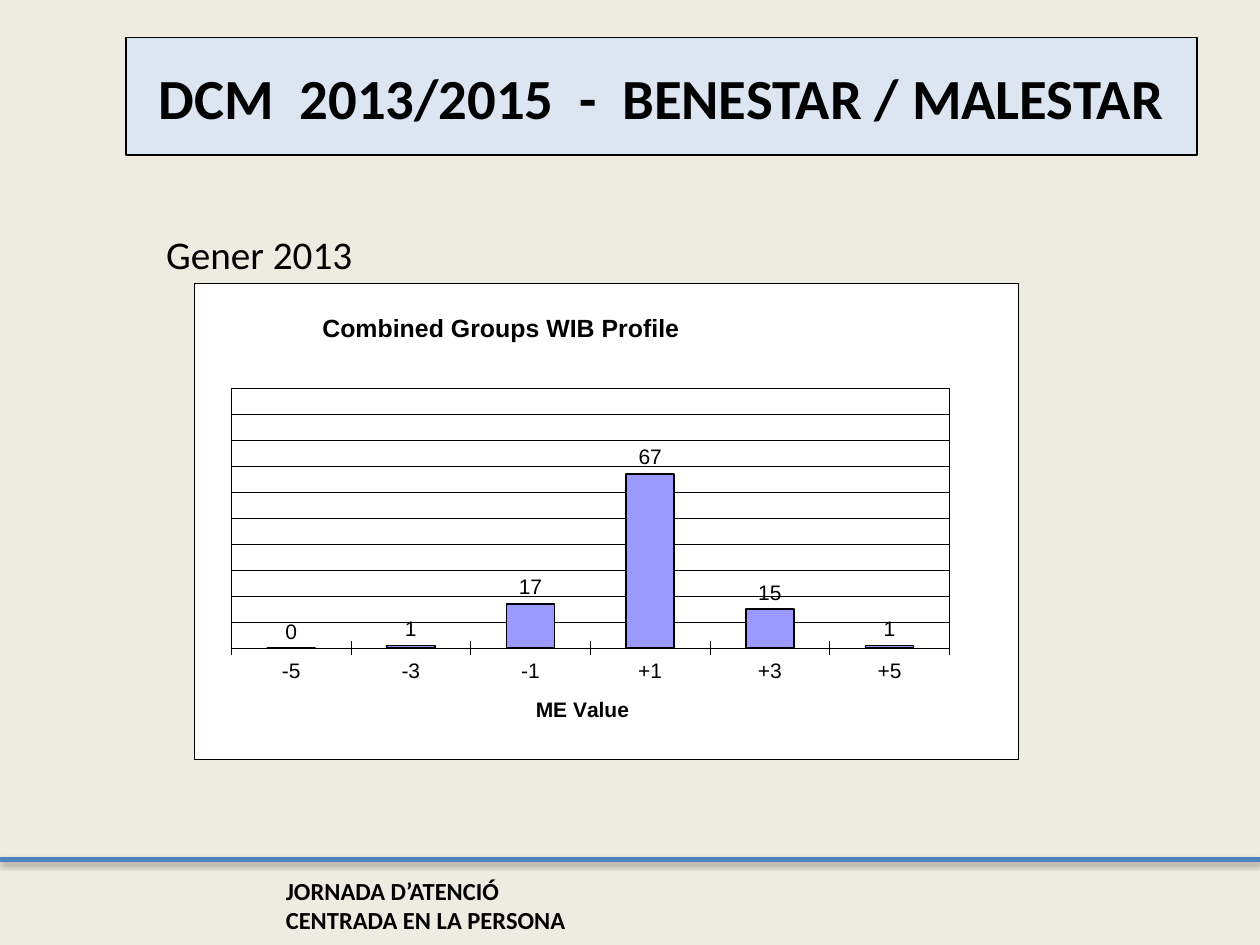
from dataclasses import dataclass

from pptx import Presentation
from pptx import util as u
from pptx.chart.data import CategoryChartData
from pptx.dml.color import RGBColor
from pptx.enum import chart as ch, shapes, text
from pptx.oxml import parse_xml
from pptx.oxml.ns import nsdecls, qn

BLACK = RGBColor(0x00, 0x00, 0x00)
CREAM = RGBColor(0xEE, 0xEC, 0xE1)
PALE_BLUE = RGBColor(0xDC, 0xE6, 0xF2)
RULE_BLUE = RGBColor(0x4F, 0x81, 0xBD)
BAR_VIOLET = RGBColor(0x99, 0x99, 0xFF)


@dataclass
class Caption:
    words: str
    left: float
    top: float
    width: float
    height: float
    size: float
    bold: bool = False
    hanging: float = 0


CAPTIONS = [
    Caption("JORNADA D’ATENCIÓ CENTRADA EN LA PERSONA", 2.17, 6.9, 2.68, 0.57, 14, True),
    Caption("Gener 2013", 1.22, 1.78, 1.73, 0.47, 22.4, hanging=0.38),
]


def apply(target, values: dict) -> None:
    for key, value in values.items():
        setattr(target, key, value)


def set_font(font, size: float, bold: bool = False, name: str = "Calibri") -> None:
    apply(font, {"name": name, "size": u.Pt(size), "bold": bold})
    font.color.rgb = BLACK


def set_line(line, width: float, color: RGBColor = BLACK) -> None:
    line.color.rgb = color
    line.width = u.Pt(width)


def add_caption(slide, caption: Caption) -> None:
    box = slide.shapes.add_textbox(
        *map(u.Inches, (caption.left, caption.top, caption.width, caption.height)))
    box.text_frame.word_wrap = True
    paragraph = box.text_frame.paragraphs[0]
    paragraph.text = caption.words
    if caption.hanging:
        properties = paragraph._p.get_or_add_pPr()
        properties.set("marL", str(u.Inches(caption.hanging)))
        properties.set("indent", str(-u.Inches(caption.hanging)))
    set_font(paragraph.runs[0].font, caption.size, caption.bold)


def add_heading(slide) -> None:
    heading = slide.shapes.add_shape(
        shapes.MSO_SHAPE.RECTANGLE, *map(u.Inches, (1, 0.3, 8.5, 0.93)))
    heading.shadow.inherit = False
    heading.fill.solid()
    heading.fill.fore_color.rgb = PALE_BLUE
    set_line(heading.line, 0.75)
    apply(heading.text_frame, {"word_wrap": True, "vertical_anchor": text.MSO_ANCHOR.MIDDLE})
    paragraph = heading.text_frame.paragraphs[0]
    paragraph.text = "DCM  2013/2015  -  BENESTAR / MALESTAR"
    paragraph.alignment = text.PP_ALIGN.CENTER
    set_font(paragraph.runs[0].font, 32.4, True)


def add_footer_rule(slide) -> None:
    rule = slide.shapes.add_connector(
        shapes.MSO_CONNECTOR.STRAIGHT, *map(u.Inches, (0, 6.82, 10, 6.82)))
    set_line(rule.line, 3, RULE_BLUE)
    rule._element.spPr.append(parse_xml(
        f'<a:effectLst {nsdecls("a")}><a:outerShdw blurRad="{u.Pt(3.1)}" dist="{u.Pt(1.8)}" '
        'dir="5400000" rotWithShape="0"><a:srgbClr val="000000"><a:alpha val="35000"/>'
        '</a:srgbClr></a:outerShdw></a:effectLst>'))


def manual_layout(x: float, y: float, size: tuple = ()):
    target = '<c:layoutTarget val="inner"/>' if size else ""
    extent = "".join(f'<c:{tag} val="{value}"/>' for tag, value in zip("wh", size))
    return parse_xml(
        f'<c:layout {nsdecls("c")}><c:manualLayout>{target}<c:xMode val="edge"/>'
        f'<c:yMode val="edge"/><c:x val="{x}"/><c:y val="{y}"/>{extent}'
        '</c:manualLayout></c:layout>')


def panel_format():
    return parse_xml(
        f'<c:spPr {nsdecls("c", "a")}><a:solidFill><a:srgbClr val="FFFFFF"/></a:solidFill>'
        f'<a:ln w="{u.Pt(0.25)}"><a:solidFill><a:srgbClr val="{BLACK}"/></a:solidFill>'
        '</a:ln></c:spPr>')


def drop_layout(element) -> None:
    for layout in element.findall(qn("c:layout")):
        element.remove(layout)


def set_title(title, words: str, size: float, x: float, y: float) -> None:
    paragraph = title.text_frame.paragraphs[0]
    paragraph.text = words
    set_font(paragraph.runs[0].font, size, True, "Arial")
    drop_layout(title._element)
    title._element.find(qn("c:tx")).addnext(manual_layout(x, y))


def add_profile_chart(slide) -> None:
    profile = CategoryChartData(number_format="0")
    profile.categories = ["-5", "-3", "-1", "+1", "+3", "+5"]
    profile.add_series("Series 1", [0, 1, 17, 67, 15, 1])
    chart = slide.shapes.add_chart(
        ch.XL_CHART_TYPE.COLUMN_CLUSTERED,
        *map(u.Inches, (1.54, 2.25, 6.54, 3.78)), profile).chart
    chart.has_legend = False
    set_font(chart.font, 12, name="Arial")
    set_title(chart.chart_title, "Combined Groups WIB Profile", 14.2, 0.15, 0.05)

    me_axis = chart.category_axis
    apply(me_axis, {"major_tick_mark": ch.XL_TICK_MARK.CROSS,
                    "tick_label_position": ch.XL_TICK_LABEL_POSITION.LOW})
    set_font(me_axis.tick_labels.font, 12, name="Arial")
    set_line(me_axis.format.line, 0.25)
    set_title(me_axis.axis_title, "ME Value", 12, 0.41, 0.86)

    score_axis = chart.value_axis
    apply(score_axis, {"minimum_scale": 0, "maximum_scale": 100, "major_unit": 10,
                       "has_major_gridlines": True, "visible": False})
    set_line(score_axis.major_gridlines.format.line, 0.25)

    plot = chart.plots[0]
    apply(plot, {"gap_width": 150, "vary_by_categories": False, "has_data_labels": True})
    apply(plot.data_labels, {"show_value": True, "number_format": "0",
                             "number_format_is_linked": False,
                             "position": ch.XL_LABEL_POSITION.OUTSIDE_END})
    set_font(plot.data_labels.font, 12, name="Arial")
    bars = plot.series[0]
    bars.invert_if_negative = False
    bars.format.fill.solid()
    bars.format.fill.fore_color.rgb = BAR_VIOLET
    set_line(bars.format.line, 1)

    chart_part = chart._chartSpace.find(qn("c:chart"))
    chart_part.addnext(panel_format())
    plot_area = chart_part.find(qn("c:plotArea"))
    drop_layout(plot_area)
    plot_area.insert(0, manual_layout(0.045, 0.219, (0.872, 0.547)))
    plot_area.append(panel_format())


def main() -> None:
    deck = Presentation()
    apply(deck, {"slide_width": u.Inches(10), "slide_height": u.Inches(7.5)})
    slide = deck.slides.add_slide(deck.slide_layouts[6])
    slide.background.fill.solid()
    slide.background.fill.fore_color.rgb = CREAM
    add_footer_rule(slide)
    add_heading(slide)
    for caption in CAPTIONS:
        add_caption(slide, caption)
    add_profile_chart(slide)
    deck.save("out.pptx")


if __name__ == "__main__":
    main()
